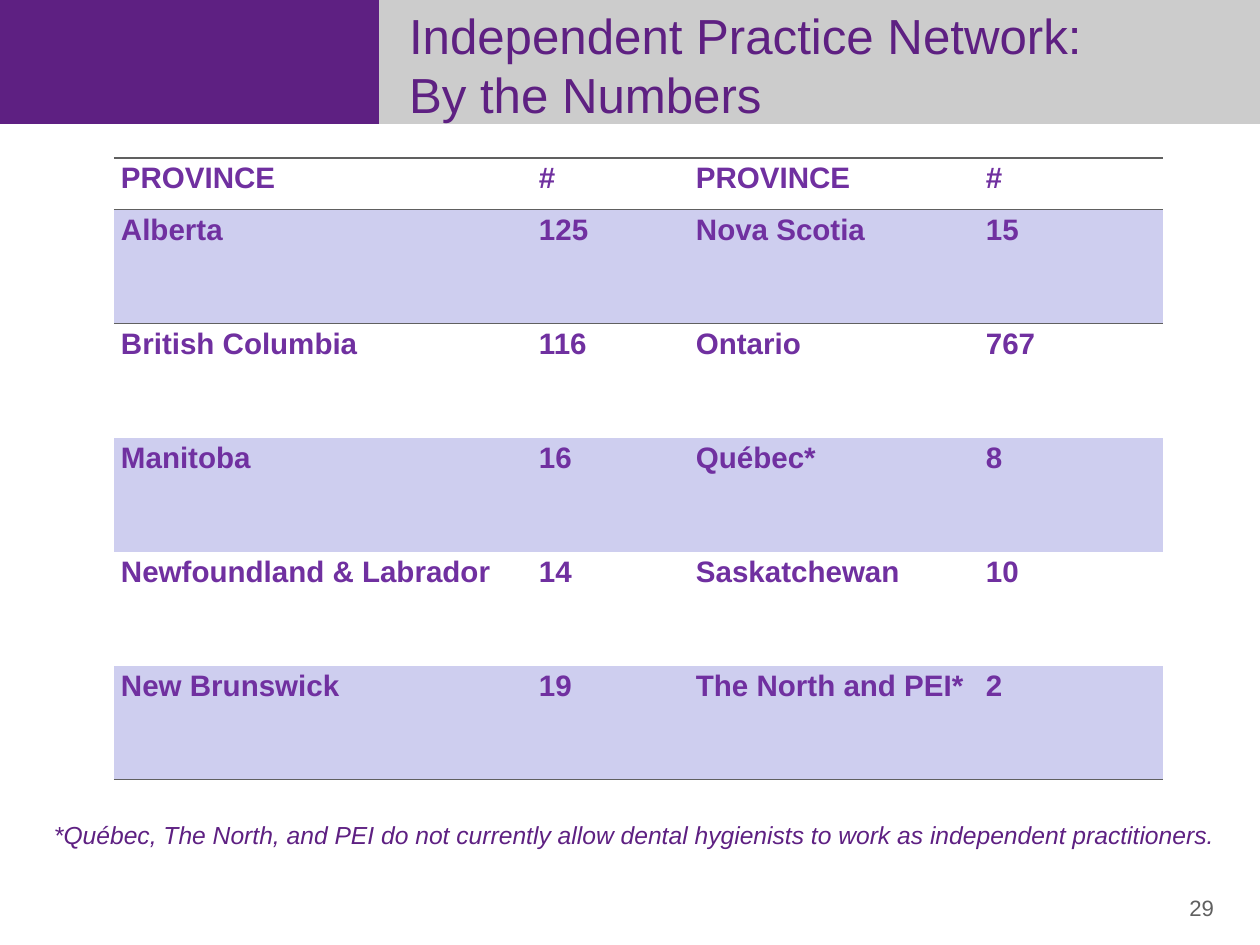
from lxml import etree
from pptx import Presentation
from pptx.dml.color import RGBColor
from pptx.enum.shapes import MSO_SHAPE
from pptx.enum.text import MSO_ANCHOR, PP_ALIGN
from pptx.oxml.ns import qn
from pptx.util import Pt

PX = 10320
RECT = MSO_SHAPE.RECTANGLE
TOP, MIDDLE = MSO_ANCHOR.TOP, MSO_ANCHOR.MIDDLE
LEFT, RIGHT = PP_ALIGN.LEFT, PP_ALIGN.RIGHT
FONT = "Arial"
NO_STYLE = "{2D5ABB26-0587-4C30-8999-92F81FD0307C}"
COLORS = {
    "purple": "5E2082",
    "band": "CCCCCC",
    "table_text": "7030A0",
    "stripe": "CECEEF",
    "gray": "606060",
}
COLUMNS = [418, 157, 290, 184]
HEADER_HEIGHT, ROW_HEIGHT = 52, 114
PROVINCES = [
    ("PROVINCE", "#", "PROVINCE", "#"),
    ("Alberta", "125", "Nova Scotia", "15"),
    ("British Columbia", "116", "Ontario", "767"),
    ("Manitoba", "16", "Québec*", "8"),
    ("Newfoundland & Labrador", "14", "Saskatchewan", "10"),
    ("New Brunswick", "19", "The North and PEI*", "2"),
]


def px(*lengths):
    """Turn px lengths into EMU."""
    return [n * PX for n in lengths]


def rgb(name):
    """Look up a named colour."""
    return RGBColor.from_string(COLORS[name])


def style_text(tf, size, color, bold=False, italic=False, align=LEFT):
    """Format every run of a text frame alike."""
    for p in tf.paragraphs:
        p.alignment = align
        for r in p.runs:
            r.font.name, r.font.size = FONT, Pt(size)
            r.font.bold, r.font.italic = bold, italic
            r.font.color.rgb = rgb(color)


def add_text(s, box, text, size, color, inset=(9, 4), anchor=TOP, **style):
    """Add a wrapped text box and return its frame."""
    tf = s.shapes.add_textbox(*px(*box)).text_frame
    tf.word_wrap, tf.vertical_anchor = True, anchor
    tf.margin_left = tf.margin_right = inset[0] * PX
    tf.margin_top = tf.margin_bottom = inset[1] * PX
    tf.text = text
    style_text(tf, size, color, **style)
    return tf


def add_header(s, x, y, w, h):
    """Draw the two-colour band and its title."""
    split = 379
    for left, width, color in ((x, split, "purple"), (x + split, w - split, "band")):
        sp = s.shapes.add_shape(RECT, *px(left, y, width, h))
        sp.shadow.inherit = False
        sp.fill.solid()
        sp.fill.fore_color.rgb = rgb(color)
        sp.line.fill.background()
    add_text(s, (x + split + 21, y + 26, 797, 77),
             "Independent Practice Network:\nBy the Numbers", 40, "purple", anchor=MIDDLE)


def add_rule(cell, tag):
    """Append a thin border to a cell, before its fill is set."""
    ln = etree.SubElement(cell._tc.get_or_add_tcPr(), qn(tag), w=str(Pt(1)))
    fill = etree.SubElement(ln, qn("a:solidFill"))
    etree.SubElement(fill, qn("a:srgbClr"), val=COLORS["gray"])


def add_province_table(s, x, y):
    """Place the striped table of provinces."""
    last = len(PROVINCES) - 1
    heights = [HEADER_HEIGHT] + [ROW_HEIGHT] * last
    frame = s.shapes.add_table(len(PROVINCES), len(COLUMNS),
                               *px(x, y, sum(COLUMNS), sum(heights)))
    table = frame.table
    table.first_row = table.horz_banding = False
    table._tbl.tblPr.find(qn("a:tableStyleId")).text = NO_STYLE
    for column, width in zip(table.columns, COLUMNS):
        column.width = width * PX
    for i, (row, height, values) in enumerate(zip(table.rows, heights, PROVINCES)):
        row.height = height * PX
        for cell, value in zip(row.cells, values):
            cell.margin_left = cell.margin_right = 7 * PX
            cell.margin_top = cell.margin_bottom = 4 * PX
            cell.text_frame.text = value
            style_text(cell.text_frame, 24, "table_text", bold=True)
            if i < 2:
                add_rule(cell, "a:lnT")
            if i in (0, last):
                add_rule(cell, "a:lnB")
            if i % 2:
                cell.fill.solid()
                cell.fill.fore_color.rgb = rgb("stripe")
            else:
                cell.fill.background()


def add_footer(s, x, y, w):
    """Place the footnote and the page number below it."""
    tf = add_text(
        s, (x, y, w, 48),
        "*Québec, The North, and PEI do not currently allow dental hygienists"
        " to work as independent practitioners.",
        20, "purple", inset=(5, 5), italic=True)
    p = tf.paragraphs[0]
    p.space_after = Pt(10)
    p._p.get_or_add_pPr().set("marL", str(5 * PX))
    add_text(s, (x + w - 72, y + 75, 63, 35), "29", 18, "gray", align=RIGHT)


def main():
    """Build and save the slide."""
    prs = Presentation()
    prs.slide_width, prs.slide_height = px(1260, 945)
    s = prs.slides.add_slide(prs.slide_layouts[6])
    add_header(s, 0, 0, 1260, 124)
    add_province_table(s, 114, 158)
    add_footer(s, 44, 815, 1188)
    prs.save("out.pptx")


if __name__ == "__main__":
    main()
